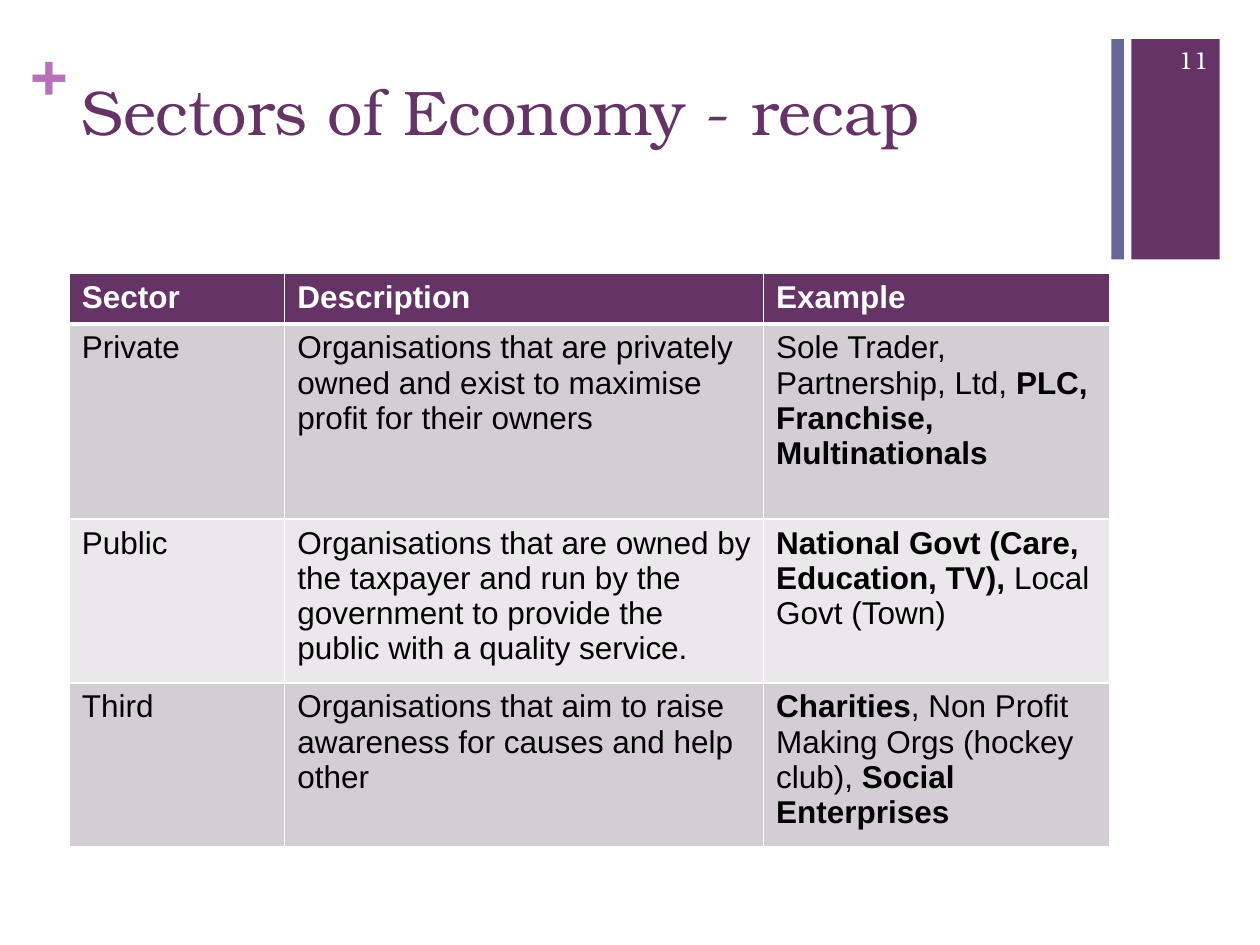
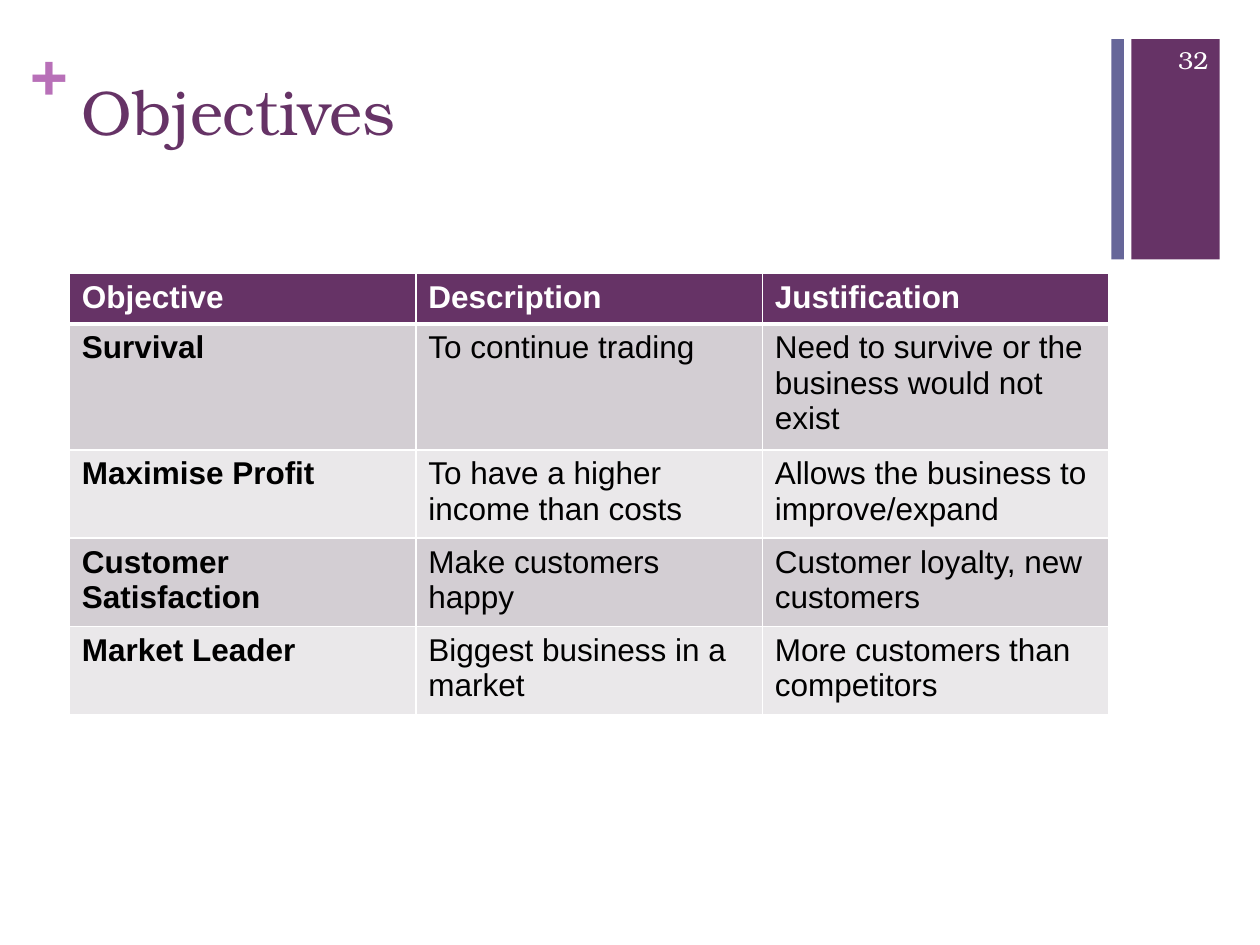
from dataclasses import dataclass

from lxml import etree
from pptx import Presentation
from pptx import util as u
from pptx.dml.color import RGBColor
from pptx.enum import shapes, text
from pptx.oxml import ns

HUES = {
    "plum": "663366",
    "slate": "666699",
    "pink": "B870B8",
    "white": "FFFFFF",
    "black": "000000",
    "dark": "D3CED3",
    "light": "EAE8EA",
}
SERIF, SANS = "TeX Gyre Bonum", "Arial"
LEFT, TOP = 0.55, 2.17


@dataclass
class Band:
    left: float
    width: float
    hue: str


@dataclass
class Label:
    left: float
    top: float
    width: float
    height: float
    size: int
    hue: str
    bold: bool = False
    inset: bool = True
    grow: bool = False
    align: int = text.PP_ALIGN.LEFT
    anchor: int = text.MSO_ANCHOR.TOP


@dataclass
class Page:
    title: str
    number: str
    widths: list[float]
    heights: list[float]
    rows: list[list[str]]


BANDS = [Band(8.98, 0.7, "plum"), Band(8.82, 0.1, "slate")]
PLUS = Label(0.24, 0.25, 0.28, 0.61, 36, "pink", bold=True, inset=False, grow=True)
TITLE = Label(LEFT, 0.53, 8.26, 1.22, 36, "plum")
NUMBER = Label(9.08, 0.27, 0.61, 0.4, 14, "white",
               align=text.PP_ALIGN.RIGHT, anchor=text.MSO_ANCHOR.MIDDLE)

PAGES = [
    Page("Sectors of Economy - recap", "11", [1.71, 3.8, 2.75], [0.4, 1.55, 1.28, 1.21], [
        ["Sector", "Description", "Example"],
        ["Private",
         "Organisations that are privately owned and exist to maximise profit for their owners",
         "Sole Trader, Partnership, Ltd, **PLC, Franchise, Multinationals"],
        ["Public",
         "Organisations that are owned by the taxpayer and run by the government "
         "to provide the public with a quality service.",
         "**National Govt (Care, Education, TV), **Local Govt (Town)"],
        ["Third",
         "Organisations that aim to raise awareness for causes and help other",
         "**Charities**, Non Profit Making Orgs (hockey club), **Social Enterprises"],
    ]),
    Page("Objectives", "32", [2.75] * 3, [0.4, 0.94] + [0.66] * 3, [
        ["Objective", "Description", "Justification"],
        ["**Survival", "To continue trading",
         "Need to survive or the business would not exist"],
        ["**Maximise Profit", "To have a higher income than costs",
         "Allows the business to improve/expand"],
        ["**Customer Satisfaction", "Make customers happy",
         "Customer loyalty, new customers"],
        ["**Market Leader", "Biggest business in a market",
         "More customers than competitors"],
    ]),
]


def tint(hue: str) -> RGBColor:
    return RGBColor.from_string(HUES[hue])


def style(font, face: str, size: int, hue: str, bold: bool) -> None:
    font.name = face
    font.size = u.Pt(size)
    font.color.rgb = tint(hue)
    font.bold = bold


def draw_band(slide, band: Band) -> None:
    bar = slide.shapes.add_shape(
        shapes.MSO_SHAPE.RECTANGLE, u.Inches(band.left), u.Inches(0.31),
        u.Inches(band.width), u.Inches(1.75))
    bar.shadow.inherit = False
    bar.fill.solid()
    bar.fill.fore_color.rgb = tint(band.hue)
    bar.line.fill.background()


def draw_label(slide, label: Label, words: str) -> None:
    box = slide.shapes.add_textbox(
        u.Inches(label.left), u.Inches(label.top),
        u.Inches(label.width), u.Inches(label.height))
    frame = box.text_frame
    frame.word_wrap = True
    frame.vertical_anchor = label.anchor
    if label.grow:
        frame.auto_size = text.MSO_AUTO_SIZE.SHAPE_TO_FIT_TEXT
    if not label.inset:
        frame.margin_left = frame.margin_right = 0
        frame.margin_top = frame.margin_bottom = 0
    frame.text = words
    para = frame.paragraphs[0]
    para.alignment = label.align
    style(para.runs[0].font, SERIF, label.size, label.hue, label.bold)


def draw_edge(cell, side: str, width: float) -> None:
    props = cell._tc.get_or_add_tcPr()
    line = etree.SubElement(props, ns.qn(f"a:ln{side}"), w=str(u.Pt(width)))
    fill = etree.SubElement(line, ns.qn("a:solidFill"))
    etree.SubElement(fill, ns.qn("a:srgbClr"), val=HUES["white"])


def fill_cell(cell, words: str, row: int) -> None:
    head = row == 0
    for side in "LRTB":
        thick = (row, side) in ((0, "B"), (1, "T"))
        draw_edge(cell, side, 3 if thick else 1)
    cell.fill.solid()
    cell.fill.fore_color.rgb = tint("plum" if head else "dark" if row % 2 else "light")
    para = cell.text_frame.paragraphs[0]
    for spot, part in enumerate(words.split("**")):
        if part:
            run = para.add_run()
            run.text = part
            style(run.font, SANS, 18, "white" if head else "black",
                  head or spot % 2 == 1)


def draw_table(slide, page: Page) -> None:
    grid = slide.shapes.add_table(
        len(page.rows), len(page.widths), u.Inches(LEFT), u.Inches(TOP),
        u.Inches(sum(page.widths)), u.Inches(sum(page.heights))).table
    for col, width in zip(grid.columns, page.widths):
        col.width = u.Inches(width)
    for row, height in enumerate(page.heights):
        grid.rows[row].height = u.Inches(height)
        for col, words in enumerate(page.rows[row]):
            fill_cell(grid.cell(row, col), words, row)


def draw_page(deck, page: Page) -> None:
    slide = deck.slides.add_slide(deck.slide_layouts[6])
    for band in BANDS:
        draw_band(slide, band)
    draw_label(slide, PLUS, "+")
    draw_label(slide, TITLE, page.title)
    draw_table(slide, page)
    draw_label(slide, NUMBER, page.number)


def main() -> None:
    deck = Presentation()
    deck.slide_width = u.Inches(10)
    deck.slide_height = u.Inches(7.5)
    for page in PAGES:
        draw_page(deck, page)
    deck.save("out.pptx")


if __name__ == "__main__":
    main()
